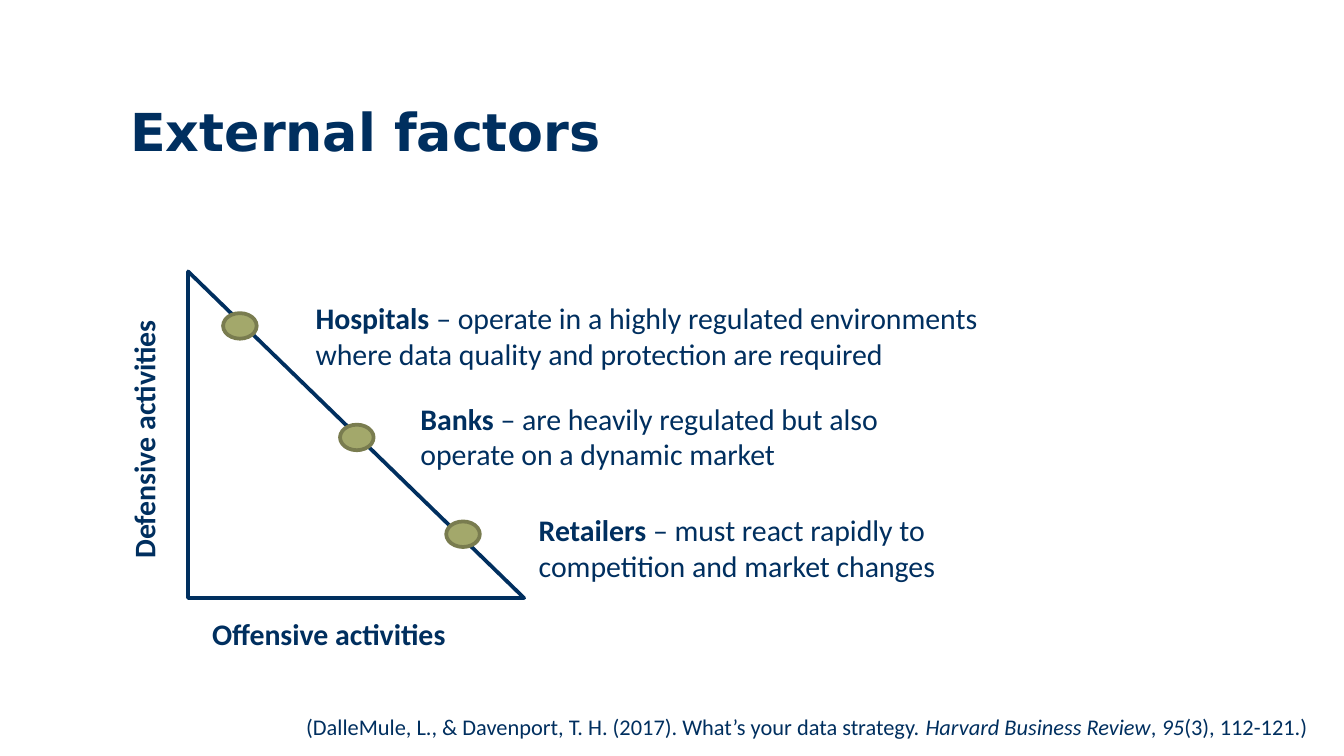
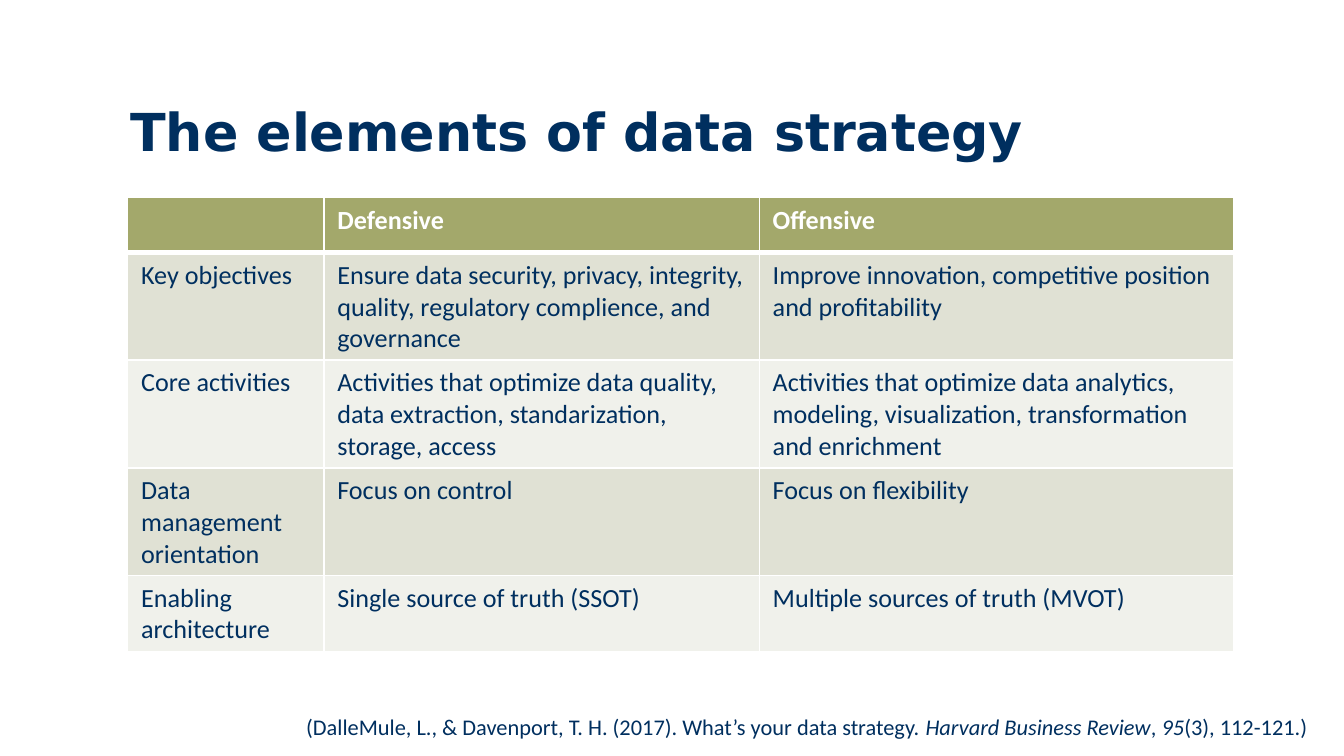
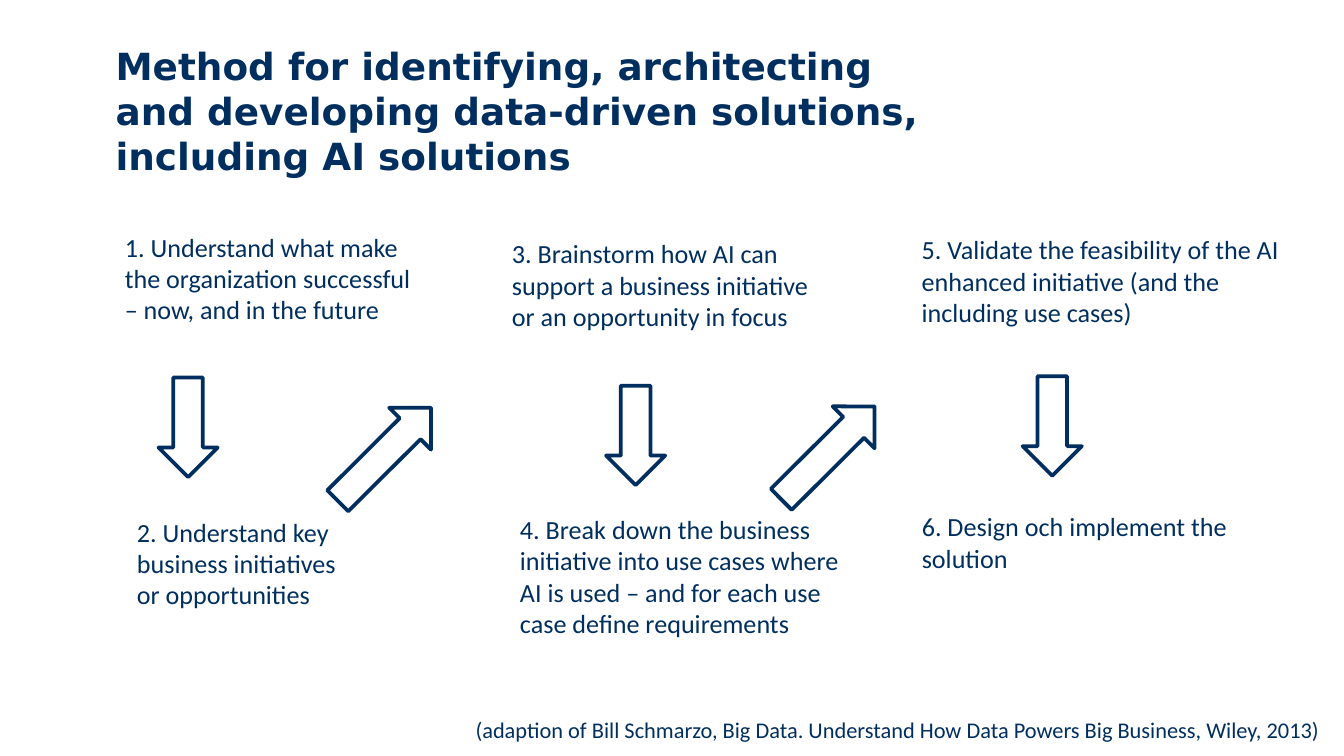
from lxml import etree
from pptx import Presentation
from pptx.dml.color import RGBColor
from pptx.enum.shapes import MSO_SHAPE
from pptx.enum.text import MSO_ANCHOR, MSO_AUTO_SIZE, PP_ALIGN
from pptx.oxml.ns import qn
from pptx.util import Inches, Pt

TRIANGLE, OVAL, DOWN_ARROW = MSO_SHAPE.RIGHT_TRIANGLE, MSO_SHAPE.OVAL, MSO_SHAPE.DOWN_ARROW
TOP, LEFT = MSO_ANCHOR.TOP, PP_ALIGN.LEFT
GROW, FIXED = MSO_AUTO_SIZE.SHAPE_TO_FIT_TEXT, MSO_AUTO_SIZE.NONE

NAVY = RGBColor(0x00, 0x2F, 0x5F)
OLIVE = RGBColor(0xA3, 0xA8, 0x6B)
DARK_OLIVE = RGBColor(0x79, 0x7C, 0x4F)
DARK_BAND = RGBColor(0xE0, 0xE1, 0xD4)
LIGHT_BAND = RGBColor(0xF0, 0xF1, 0xEB)
WHITE = RGBColor(0xFF, 0xFF, 0xFF)

TITLE_FONT, BODY_FONT = "DejaVu Sans", "Calibri"
PLAIN, BOLD, ITALIC = "plain", "bold", "italic"

# Each slide: title, left, top, width, size, then its source note with left, top, width
REVIEW_NOTE = [
    ("(DalleMule, L., & Davenport, T. H. (2017). What’s your data strategy. ", PLAIN),
    ("Harvard Business Review", ITALIC),
    (", ", PLAIN),
    ("95", ITALIC),
    ("(3), 112-121.)", PLAIN),
]
BOOK_NOTE = [("(adaption of Bill Schmarzo, Big Data. Understand How Data Powers "
              "Big Business, Wiley, 2013)", PLAIN)]
SLIDES = [
    ("External factors", 0.87, 0.69, 8.88, 28, REVIEW_NOTE, 2.18, 5.26, 7.72),
    ("The elements of data strategy", 0.87, 0.69, 7.49, 28, REVIEW_NOTE, 2.18, 5.26, 7.72),
    ("Method for identifying, architecting\nand developing data-driven solutions, "
     "including AI solutions", 0.76, 0.27, 7.49, 20, BOOK_NOTE, 3.44, 5.28, 6.54),
]


def add_text(slide, runs, left, top, width, height, size, wrap=True):
    box = slide.shapes.add_textbox(Inches(left), Inches(top), Inches(width), Inches(height))
    box.text_frame.word_wrap = wrap
    box.text_frame.auto_size = GROW
    paragraph = box.text_frame.paragraphs[0]
    for text, style in runs:
        run = paragraph.add_run()
        run.text = text
        run.font.name, run.font.size = BODY_FONT, Pt(size)
        run.font.color.rgb = NAVY
        run.font.bold, run.font.italic = style == BOLD, style == ITALIC
    return box


def add_outlined(slide, kind, left, top, width, height, fill=WHITE, line=NAVY):
    shape = slide.shapes.add_shape(
        kind, Inches(left), Inches(top), Inches(width), Inches(height))
    shape.shadow.inherit = False
    shape.fill.solid()
    shape.fill.fore_color.rgb = fill
    shape.line.color.rgb = line
    shape.line.width = Pt(2)
    return shape


presentation = Presentation()
presentation.slide_width, presentation.slide_height = Inches(10), Inches(5.625)

# Titles and source notes
slides = []
for title, left, top, width, size, note, note_left, note_top, note_width in SLIDES:
    slide = presentation.slides.add_slide(presentation.slide_layouts[5])
    placeholder = slide.shapes.title
    placeholder.left, placeholder.top = Inches(left), Inches(top)
    placeholder.width, placeholder.height = Inches(width), Inches(0.65)
    frame = placeholder.text_frame
    frame.word_wrap, frame.auto_size, frame.vertical_anchor = True, FIXED, TOP
    paragraph = frame.paragraphs[0]
    paragraph.alignment = LEFT
    for index, line in enumerate(title.split("\n")):
        if index:
            paragraph.add_line_break()
        run = paragraph.add_run()
        run.text = line
        run.font.name, run.font.size, run.font.bold = TITLE_FONT, Pt(size), True
        run.font.color.rgb = NAVY
    add_text(slide, note, note_left, note_top, note_width, 0.3, 12, wrap=False)
    slides.append(slide)
factors_slide, elements_slide, method_slide = slides

# External factors: triangle with its two axes
add_outlined(factors_slide, TRIANGLE, 1.4, 2.02, 2.5, 2.43)
add_text(factors_slide, [("Offensive activities", BOLD)], 1.48, 4.53, 1.97, 0.37, 16, wrap=False)
defensive = add_text(factors_slide, [("Defensive activities", BOLD)],
                     0.07, 3.07, 2, 0.37, 16, wrap=False)
defensive.rotation = 270

# Industries: marker on the slope and the explanation beside it
INDUSTRIES = [
    ("Hospitals ", "– operate in a highly regulated environments where data quality "
     "and protection are required", 1.66, 2.33, 2.25, 2.18, 5.23),
    ("Banks ", "– are heavily regulated but also operate on a dynamic market",
     2.53, 3.16, 3.03, 2.93, 4.01),
    ("Retailers ", "– must react rapidly to competition and market changes",
     3.32, 3.88, 3.91, 3.76, 4.01),
]
for name, reason, marker_left, marker_top, left, top, width in INDUSTRIES:
    add_outlined(factors_slide, OVAL, marker_left, marker_top, 0.25, 0.19, OLIVE, DARK_OLIVE)
    add_text(factors_slide, [(name, BOLD), (reason, PLAIN)], left, top, width, 0.64, 16)

# Elements of data strategy: table
ELEMENTS = [
    ("", "Defensive", "Offensive"),
    ("Key objectives",
     "Ensure data security, privacy, integrity, quality, regulatory complience, and governance",
     "Improve innovation, competitive position and profitability"),
    ("Core activities",
     "Activities that optimize data quality, data extraction, standarization, storage, access",
     "Activities that optimize data analytics, modeling, visualization, transformation "
     "and enrichment"),
    ("Data management orientation", "Focus on control", "Focus on flexibility"),
    ("Enabling architecture", "Single source of truth (SSOT)", "Multiple sources of truth (MVOT)"),
]
COLUMN_WIDTHS = [1.46, 3.24, 3.53]
ROW_HEIGHT = 0.41
table = elements_slide.shapes.add_table(
    len(ELEMENTS), len(COLUMN_WIDTHS), Inches(0.95), Inches(1.47),
    Inches(sum(COLUMN_WIDTHS)), Inches(ROW_HEIGHT * len(ELEMENTS))).table
for column, width in zip(table.columns, COLUMN_WIDTHS):
    column.width = Inches(width)

for row_index, row in enumerate(ELEMENTS):
    is_header = row_index == 0
    band = OLIVE if is_header else DARK_BAND if row_index % 2 else LIGHT_BAND
    for column_index, text in enumerate(row):
        cell = table.cell(row_index, column_index)
        paragraph = cell.text_frame.paragraphs[0]
        paragraph.font.size = Pt(14)
        if text:
            run = paragraph.add_run()
            run.text = text
            run.font.name, run.font.size, run.font.bold = BODY_FONT, Pt(14), is_header
            run.font.color.rgb = WHITE if is_header else NAVY
        # White borders, heavier around the foot of the header; they precede the fill
        properties = cell._tc.get_or_add_tcPr()
        for side in ("lnL", "lnR", "lnT", "lnB"):
            heavy = (side == "lnB" and is_header) or (side == "lnT" and row_index == 1)
            border = etree.SubElement(properties, qn(f"a:{side}"), w=str(Pt(3 if heavy else 1)))
            fill = etree.SubElement(border, qn("a:solidFill"))
            etree.SubElement(fill, qn("a:srgbClr"), val=str(WHITE))
        cell.fill.solid()
        cell.fill.fore_color.rgb = band

# Method: six steps
STEPS = [
    ("1. Understand what make the organization successful – now, and in the future",
     0.83, 1.67, 2.45, 0.81),
    ("2. Understand key business initiatives or opportunities", 0.92, 3.79, 1.8, 0.81),
    ("3. Brainstorm how AI can support a business initiative or an opportunity in focus",
     3.71, 1.72, 2.61, 0.81),
    ("4. Break down the business initiative into use cases where AI is used – and for "
     "each use case define requirements", 3.77, 3.77, 2.68, 1.04),
    ("5. Validate the feasibility of the AI enhanced initiative (and the including use cases)",
     6.76, 1.69, 2.94, 0.81),
    ("6. Design och implement the solution", 6.76, 3.75, 2.71, 0.57),
]
for text, left, top, width, height in STEPS:
    add_text(method_slide, [(text, PLAIN)], left, top, width, height, 14)

# Arrows down within a column, and turned up towards the next one
DOWNWARD, UPWARD = (0.74, 0), (0.98, 225.1)
ARROWS = [
    (1.18, 2.81, DOWNWARD), (2.64, 2.89, UPWARD), (4.51, 2.87, DOWNWARD),
    (5.94, 2.88, UPWARD), (7.61, 2.8, DOWNWARD),
]
for left, top, (length, rotation) in ARROWS:
    arrow = add_outlined(method_slide, DOWN_ARROW, left, top, 0.44, length)
    arrow.rotation = rotation

presentation.save("out.pptx")
